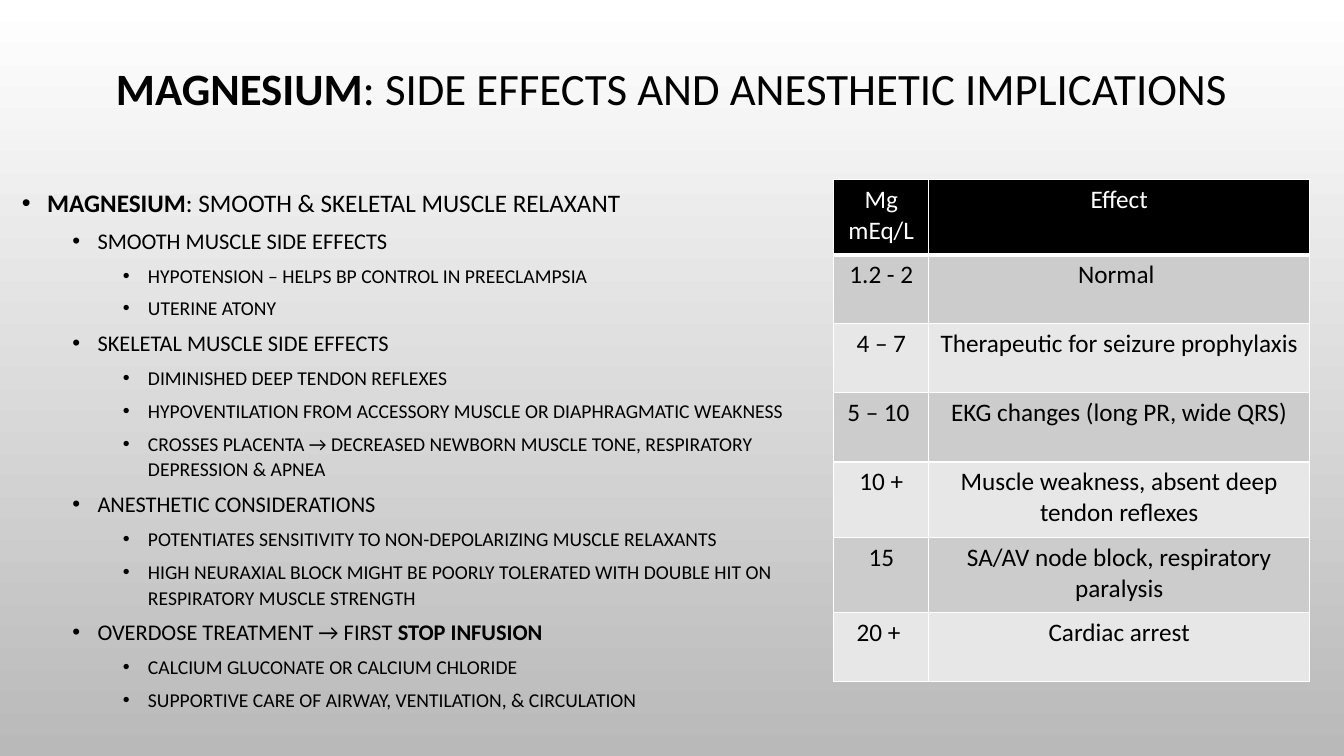
from lxml.etree import SubElement
from pptx import Presentation
from pptx.dml.color import RGBColor
from pptx.enum.text import MSO_ANCHOR, MSO_AUTO_SIZE, PP_ALIGN
from pptx.oxml.ns import qn
from pptx.util import Cm, Pt

FONT = "Calibri"
COLORS = {
    "text": "000000",
    "header": "000000",
    "header_text": "FFFFFF",
    "border": "FFFFFF",
    "band_dark": "CCCCCC",
    "band_light": "E7E7E7",
    "background_top": "FFFFFF",
    "background_bottom": "B9B9B9",
}
LEVEL_SIZES = [18, 16, 14]
TITLE = [("MAGNESIUM", True), (": SIDE EFFECTS AND ANESTHETIC IMPLICATIONS", False)]
BULLETS = [
    (0, [("MAGNESIUM", True), (": SMOOTH & SKELETAL MUSCLE RELAXANT", False)]),
    (1, [("SMOOTH MUSCLE SIDE EFFECTS", False)]),
    (2, [("HYPOTENSION – HELPS BP CONTROL IN PREECLAMPSIA", False)]),
    (2, [("UTERINE ATONY", False)]),
    (1, [("SKELETAL MUSCLE SIDE EFFECTS", False)]),
    (2, [("DIMINISHED DEEP TENDON REFLEXES", False)]),
    (2, [("HYPOVENTILATION FROM ACCESSORY MUSCLE OR DIAPHRAGMATIC WEAKNESS", False)]),
    (2, [("CROSSES PLACENTA → DECREASED NEWBORN MUSCLE TONE, RESPIRATORY DEPRESSION & APNEA", False)]),
    (1, [("ANESTHETIC CONSIDERATIONS", False)]),
    (2, [("POTENTIATES SENSITIVITY TO NON-DEPOLARIZING MUSCLE RELAXANTS", False)]),
    (2, [("HIGH NEURAXIAL BLOCK MIGHT BE POORLY TOLERATED WITH DOUBLE HIT ON "
          "RESPIRATORY MUSCLE STRENGTH", False)]),
    (1, [("OVERDOSE TREATMENT → FIRST ", False), ("STOP INFUSION", True)]),
    (2, [("CALCIUM GLUCONATE OR CALCIUM CHLORIDE", False)]),
    (2, [("SUPPORTIVE CARE OF AIRWAY, VENTILATION, & CIRCULATION", False)]),
]
EFFECTS = [
    ("Mg mEq/L", "Effect"),
    ("1.2 - 2", "Normal "),
    ("4 – 7", "Therapeutic for seizure prophylaxis"),
    ("5 – 10 ", "EKG changes (long PR, wide QRS)"),
    ("10 +", "Muscle weakness, absent deep tendon reflexes"),
    ("15", "SA/AV node block, respiratory paralysis"),
    ("20 + ", "Cardiac arrest"),
]
COLUMN_SHARES = [0.2, 0.8]
ROW_HEIGHTS = [1.9, 1.74, 1.74, 1.74, 1.9, 1.9, 1.74]


def color(name):
    return RGBColor.from_string(COLORS[name])


def add_run(paragraph, text, size, color_name="text", bold=False):
    run = paragraph.add_run()
    run.text = text
    run.font.name = FONT
    run.font.size = Pt(size)
    run.font.bold = bold
    run.font.color.rgb = color(color_name)


def place(shape, left, top, width, height):
    shape.left, shape.top = Cm(left), Cm(top)
    shape.width, shape.height = Cm(width), Cm(height)


def set_bullet(paragraph, level):
    paragraph.level = level
    properties = paragraph._p.get_or_add_pPr()
    properties.set("marL", str(Cm(0.635 + 1.27 * level)))
    properties.set("indent", str(-Cm(0.635)))
    bullet_color = SubElement(properties, qn("a:buClr"))
    SubElement(bullet_color, qn("a:srgbClr"), val=COLORS["text"])
    SubElement(properties, qn("a:buFont"), typeface="Arial")
    SubElement(properties, qn("a:buChar"), char="•")


def set_borders(cell, bottom_width):
    properties = cell._tc.get_or_add_tcPr()
    for side, width in (("L", 1), ("R", 1), ("T", 1), ("B", bottom_width)):
        line = SubElement(properties, qn(f"a:ln{side}"), w=str(Pt(width)))
        fill = SubElement(line, qn("a:solidFill"))
        SubElement(fill, qn("a:srgbClr"), val=COLORS["border"])


def paint_background(slide):
    fill = slide.background.fill
    fill.gradient()
    fill.gradient_angle = 270
    for stop, name in zip(fill.gradient_stops, ("background_top", "background_bottom")):
        stop.color.rgb = color(name)


def fill_title(shape, left, top, width, height):
    place(shape, left, top, width, height)
    frame = shape.text_frame
    frame.auto_size = MSO_AUTO_SIZE.NONE
    frame.vertical_anchor = MSO_ANCHOR.MIDDLE
    paragraph = frame.paragraphs[0]
    paragraph.alignment = PP_ALIGN.CENTER
    paragraph.line_spacing = 0.9
    for text, bold in TITLE:
        add_run(paragraph, text, 32, bold=bold)


def fill_bullets(shape, left, top, width, height):
    place(shape, left, top, width, height)
    frame = shape.text_frame
    frame.auto_size = MSO_AUTO_SIZE.NONE
    frame.vertical_anchor = MSO_ANCHOR.TOP
    for index, (level, runs) in enumerate(BULLETS):
        paragraph = frame.add_paragraph() if index else frame.paragraphs[0]
        set_bullet(paragraph, level)
        paragraph.line_spacing = 1.1
        paragraph.space_before = Pt(5 if index else 0)
        for text, bold in runs:
            add_run(paragraph, text, LEVEL_SIZES[level], bold=bold)


def add_effects_table(slide, left, top, width):
    frame = slide.shapes.add_table(
        len(EFFECTS), len(COLUMN_SHARES),
        Cm(left), Cm(top), Cm(width), Cm(sum(ROW_HEIGHTS)))
    table = frame.table
    table.horz_banding = False
    for column, share in zip(table.columns, COLUMN_SHARES):
        column.width = Cm(width * share)
    for row_index, (row, texts) in enumerate(zip(table.rows, EFFECTS)):
        row.height = Cm(ROW_HEIGHTS[row_index])
        is_header = row_index == 0
        band = "band_dark" if row_index % 2 else "band_light"
        for cell, text in zip(row.cells, texts):
            set_borders(cell, 3 if is_header else 1)
            cell.fill.solid()
            cell.fill.fore_color.rgb = color("header" if is_header else band)
            paragraph = cell.text_frame.paragraphs[0]
            paragraph.alignment = PP_ALIGN.CENTER
            add_run(paragraph, text, 18, "header_text" if is_header else "text")


def main():
    presentation = Presentation()
    presentation.slide_width = Cm(33.87)
    presentation.slide_height = Cm(19.05)
    slide = presentation.slides.add_slide(presentation.slide_layouts[1])
    paint_background(slide)
    fill_title(slide.shapes.title, 2.54, 0.89, 28.78, 2.79)
    fill_bullets(slide.placeholders[1], 0.3, 4.52, 20.68, 13.79)
    add_effects_table(slide, 21.01, 4.52, 11.99)
    presentation.save("out.pptx")


if __name__ == "__main__":
    main()
